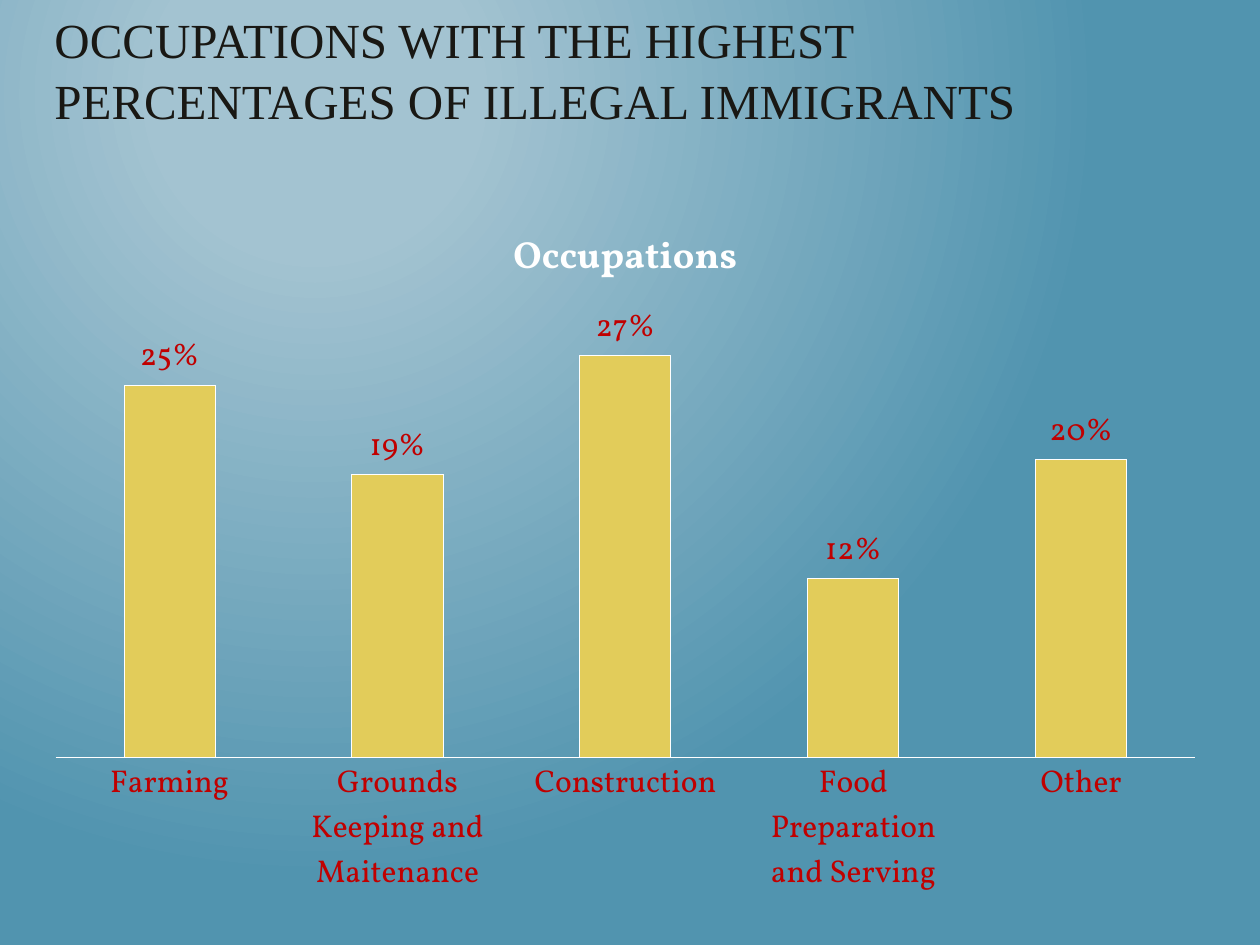
from pptx import Presentation
from pptx.chart.data import CategoryChartData
from pptx.dml.color import RGBColor
from pptx.enum.chart import XL_CHART_TYPE as ChartType, XL_LABEL_POSITION as LabelPosition
from pptx.enum.chart import XL_TICK_MARK as TickMark
from pptx.enum.text import MSO_ANCHOR as Anchor
from pptx.oxml.ns import qn
from pptx.util import Emu, Pt
from lxml.etree import SubElement

TITLE = "OCCUPATIONS WITH THE HIGHEST PERCENTAGES OF ILLEGAL IMMIGRANTS"
SERIES_NAME = "Occupations"
SHARES = [
    ("Farming", 0.25),
    ("Grounds Keeping and Maitenance", 0.19),
    ("Construction", 0.27),
    ("Food Preparation and Serving", 0.12),
    ("Other", 0.20),
]

TITLE_FONT, CHART_FONT = "Times New Roman", "Vollkorn"
INK = RGBColor(0x19, 0x18, 0x14)
WHITE = RGBColor(0xFF, 0xFF, 0xFF)
RED = RGBColor(0xC0, 0x00, 0x00)
YELLOW = RGBColor(0xE2, 0xCC, 0x5A)
GLOW_STOPS = [(0.2, RGBColor(0xA3, 0xC3, 0xD1)), (1, RGBColor(0x51, 0x94, 0xAF))]
GLOW_FOCUS = {"l": 50, "t": 20, "r": 100, "b": 100}

EMU_PER_PX = 914400 / 126


def px(*lengths):
    return [Emu(round(length * EMU_PER_PX)) for length in lengths]


def style_font(font, name, size, color, bold=False):
    font.name, font.size, font.bold = name, Pt(size), bold
    font.color.rgb = color


def add_text(slide, text, area, *, font, size, color, spacing):
    box = slide.shapes.add_textbox(*px(*area))
    frame = box.text_frame
    frame.word_wrap = True
    frame.vertical_anchor = Anchor.TOP
    para = frame.paragraphs[0]
    para.line_spacing = spacing
    span = para.add_run()
    span.text = text
    style_font(span.font, font, size, color)


def paint_background(slide):
    """Fill the background with a circular glow around GLOW_FOCUS."""
    fill = slide.background.fill
    fill.gradient()
    for stop, (position, color) in zip(fill.gradient_stops, GLOW_STOPS):
        stop.position = position
        stop.color.rgb = color
    gradient = next(slide.element.iter(qn("a:gradFill")))
    gradient.remove(gradient.find(qn("a:lin")))
    circle = SubElement(gradient, qn("a:path"), path="circle")
    SubElement(circle, qn("a:fillToRect"),
               {side: str(percent * 1000) for side, percent in GLOW_FOCUS.items()})


def add_share_chart(slide, area):
    data = CategoryChartData(number_format="0%")
    data.categories = [name for name, _ in SHARES]
    data.add_series(SERIES_NAME, [share for _, share in SHARES])
    chart = slide.shapes.add_chart(ChartType.COLUMN_CLUSTERED, *px(*area), data).chart
    style_font(chart.font, CHART_FONT, 18, WHITE)
    chart.has_legend = False

    chart.has_title = True
    chart.chart_title.include_in_layout = False
    heading = chart.chart_title.text_frame
    heading.text = SERIES_NAME
    style_font(heading.paragraphs[0].runs[0].font, CHART_FONT, 21.6, WHITE, bold=True)

    values = chart.value_axis
    values.visible = False
    values.has_major_gridlines = False
    values.minimum_scale, values.maximum_scale = 0, 0.3

    names = chart.category_axis
    names.major_tick_mark = names.minor_tick_mark = TickMark.NONE
    names.format.line.color.rgb = WHITE
    style_font(names.tick_labels.font, CHART_FONT, 18, RED)

    plot = chart.plots[0]
    plot.gap_width, plot.overlap = 150, -25
    plot.vary_by_categories = False
    bars = plot.series[0]
    bars.format.fill.solid()
    bars.format.fill.fore_color.rgb = YELLOW
    bars.format.line.color.rgb = WHITE

    labels = bars.data_labels
    labels.show_value = True
    labels.number_format, labels.number_format_is_linked = "0%", False
    labels.position = LabelPosition.OUTSIDE_END
    style_font(labels.font, CHART_FONT, 18, RED)


def main():
    deck = Presentation()
    deck.slide_width, deck.slide_height = px(1260, 945)
    slide = deck.slides.add_slide(deck.slide_layouts[6])
    paint_background(slide)
    add_text(slide, TITLE, (42, 0, 1139, 179),
             font=TITLE_FONT, size=28, color=INK, spacing=1.05)
    add_share_chart(slide, (32, 199, 1187, 712))
    deck.save("out.pptx")


if __name__ == "__main__":
    main()
